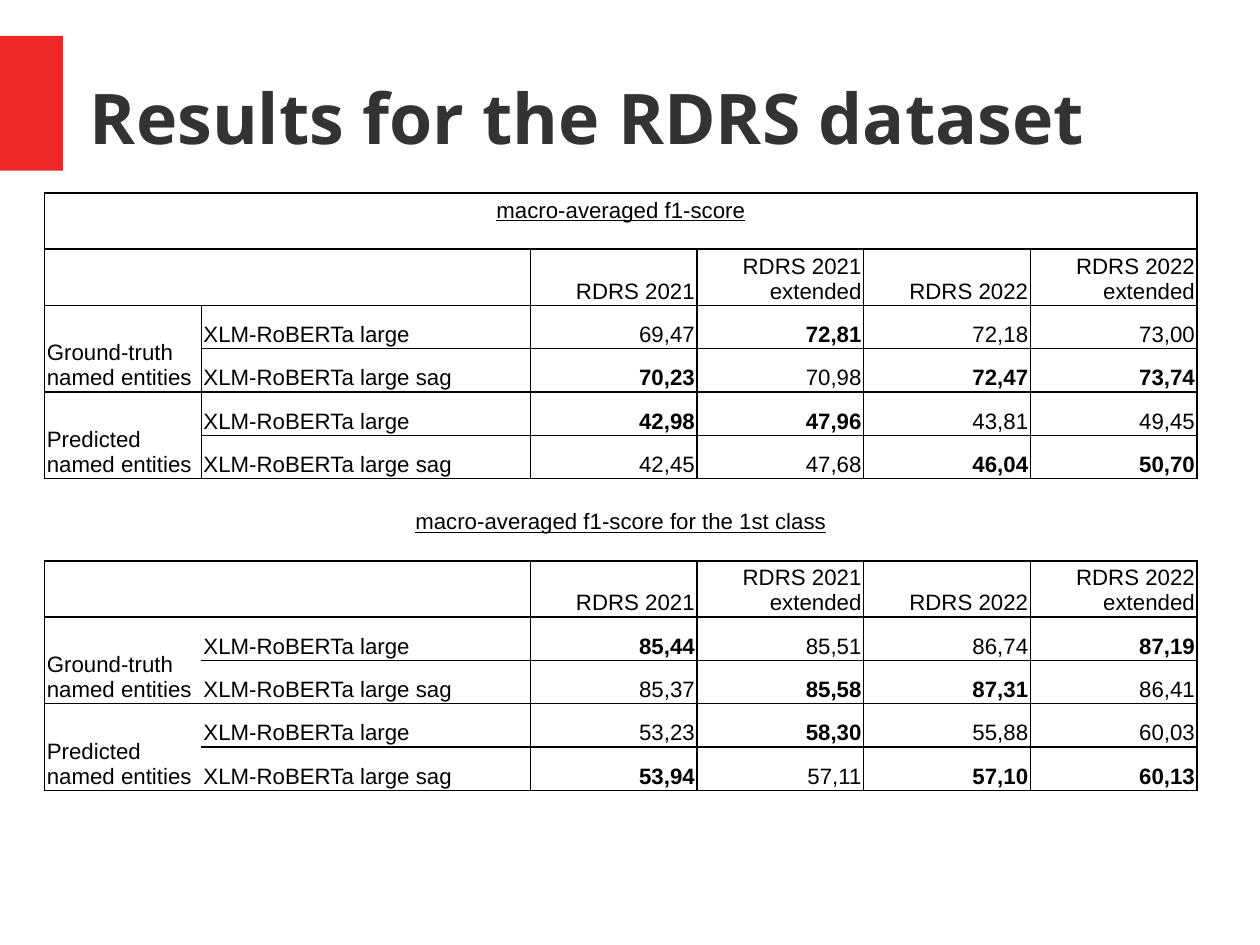
import copy
from dataclasses import dataclass

import pptx
import pptx.dml.color
import pptx.enum.shapes
import pptx.enum.text
import pptx.oxml
import pptx.oxml.ns
import pptx.util

RED = pptx.dml.color.RGBColor(0xEF, 0x29, 0x29)
GREY = pptx.dml.color.RGBColor(0x33, 0x33, 0x33)
BLACK = pptx.dml.color.RGBColor(0, 0, 0)

SLIDE_W = pptx.util.Cm(28)
SLIDE_H = pptx.util.Cm(21)
ALIGN = pptx.enum.text.PP_ALIGN
BOTTOM = pptx.enum.text.MSO_ANCHOR.BOTTOM

# Table grid, in percent of the slide
COLUMNS = [12.43, 26.13] + [13.23] * 4
CAPTION_H, GAP_H, HEADER_H, RESULT_H = 5.93, 8.71, 5.93, 4.59
BLOCK_ROWS = 6

DATASETS = ["RDRS 2021", "RDRS 2021 extended", "RDRS 2022", "RDRS 2022 extended"]
ENTITIES = ["Ground-truth named entities", "Predicted \nnamed entities"]
MODELS = ["XLM-RoBERTa large", "XLM-RoBERTa large sag"]


@dataclass
class Block:
    caption: str
    caption_h: float
    scores: list[list[float]]
    caption_sides: str  # vertical edges drawn beside the caption
    label_sides: str    # vertical edges drawn beside an entity label
    model_sides: str    # vertical edges drawn beside a model name


BLOCKS = [
    Block("macro-averaged f1-score", CAPTION_H,
          [[69.47, 72.81, 72.18, 73.00], [70.23, 70.98, 72.47, 73.74],
           [42.98, 47.96, 43.81, 49.45], [42.45, 47.68, 46.04, 50.70]],
          "LR", "LR", "LR"),
    Block("macro-averaged f1-score for the 1st class", GAP_H,
          [[85.44, 85.51, 86.74, 87.19], [85.37, 85.58, 87.31, 86.41],
           [53.23, 58.30, 55.88, 60.03], [53.94, 57.11, 57.10, 60.13]],
          "", "L", "R"),
]


def across(percent: float) -> int:
    return round(SLIDE_W * percent / 100)


def down(percent: float) -> int:
    return round(SLIDE_H * percent / 100)


def write(tf, text: str, align=ALIGN.LEFT, color=BLACK, **font) -> None:
    p = tf.paragraphs[0]
    p.alignment = align
    for i, line in enumerate(text.split("\n")):
        if i:
            # The line break takes the format of the run before it
            p.add_line_break()
            p._p[-1].append(copy.deepcopy(r._r.rPr))
        r = p.add_run()
        r.text = line
        for name, value in font.items():
            setattr(r.font, name, value)
        r.font.color.rgb = color


def set_borders(cell, edges: str) -> None:
    """Draw the named edges of a cell and blank the others."""
    tc_pr = cell._tc.get_or_add_tcPr()
    for i, edge in enumerate("LRTB"):
        fill = ('<a:solidFill><a:srgbClr val="000000"/></a:solidFill>'
                if edge in edges else "<a:noFill/>")
        tc_pr.insert(i, pptx.oxml.parse_xml(
            f'<a:ln{edge} {pptx.oxml.ns.nsdecls("a")} w="12700">{fill}</a:ln{edge}>'))


def fill_cell(cell, text: str, align=ALIGN.LEFT, **font) -> None:
    write(cell.text_frame, text, align, name="Arial",
          size=pptx.util.Pt(14), **font)


def add_block(table, block: Block, top: int) -> None:
    heights = [block.caption_h, HEADER_H] + [RESULT_H] * len(block.scores)
    for i, height in enumerate(heights):
        table.rows[top + i].height = down(height)

    # Cell format
    for i in range(BLOCK_ROWS):
        for j in range(len(COLUMNS)):
            cell = table.cell(top + i, j)
            sides = "LR"
            if i == 0:
                sides = block.caption_sides
            elif i > 1 and j < 2:
                sides = (block.label_sides, block.model_sides)[j]
            margin = pptx.util.Inches(0.01)
            values = dict(vertical_anchor=BOTTOM, margin_left=2 * margin,
                          margin_right=2 * margin, margin_top=margin,
                          margin_bottom=margin * (23 if i == 0 else 1))
            for name, value in values.items():
                setattr(cell, name, value)
            cell.fill.background()
            set_borders(cell, sides + "TB")

    # Caption and header
    table.cell(top, 0).merge(table.cell(top, len(COLUMNS) - 1))
    fill_cell(table.cell(top, 0), block.caption, ALIGN.CENTER, underline=True)
    table.cell(top + 1, 0).merge(table.cell(top + 1, 1))
    for j, dataset in enumerate(DATASETS, 2):
        fill_cell(table.cell(top + 1, j), dataset, ALIGN.RIGHT)

    # Results, the best score of each pair of models in bold
    for e, entity in enumerate(ENTITIES):
        first = top + 2 + e * len(MODELS)
        pair = block.scores[e * len(MODELS):(e + 1) * len(MODELS)]
        best = [max(column) for column in zip(*pair)]
        table.cell(first, 0).merge(table.cell(first + len(MODELS) - 1, 0))
        fill_cell(table.cell(first, 0), entity)
        for m, (model, scores) in enumerate(zip(MODELS, pair)):
            fill_cell(table.cell(first + m, 1), model)
            for j, score in enumerate(scores):
                fill_cell(table.cell(first + m, j + 2),
                          f"{score:.2f}".replace(".", ","), ALIGN.RIGHT,
                          bold=score == best[j])


def main() -> None:
    prs = pptx.Presentation()
    prs.slide_width = SLIDE_W
    prs.slide_height = SLIDE_H
    s = prs.slides.add_slide(prs.slide_layouts[6])

    # Red tab
    sp = s.shapes.add_shape(pptx.enum.shapes.MSO_SHAPE.RECTANGLE,
                            0, down(3.8), across(5), down(14.27))
    sp.shadow.inherit = False
    sp.fill.solid()
    sp.fill.fore_color.rgb = RED
    sp.line.fill.background()

    # Title
    tf = s.shapes.add_textbox(across(7.14), down(7.86),
                              across(87.84), down(8.95)).text_frame
    values = dict(word_wrap=True, margin_left=0, margin_right=0, margin_top=0,
                  margin_bottom=0,
                  vertical_anchor=pptx.enum.text.MSO_ANCHOR.MIDDLE)
    for name, value in values.items():
        setattr(tf, name, value)
    write(tf, "Results for the RDRS dataset", name="Noto Sans",
          size=pptx.util.Pt(44), bold=True, color=GREY)

    # Results table
    table = s.shapes.add_table(
        BLOCK_ROWS * len(BLOCKS), len(COLUMNS), across(3.54), down(20.44),
        across(sum(COLUMNS)), down(63.22)).table
    table.first_row = table.horz_banding = False
    for column, width in zip(table.columns, COLUMNS):
        column.width = across(width)
    for b, block in enumerate(BLOCKS):
        add_block(table, block, b * BLOCK_ROWS)

    prs.save("out.pptx")


if __name__ == "__main__":
    main()
